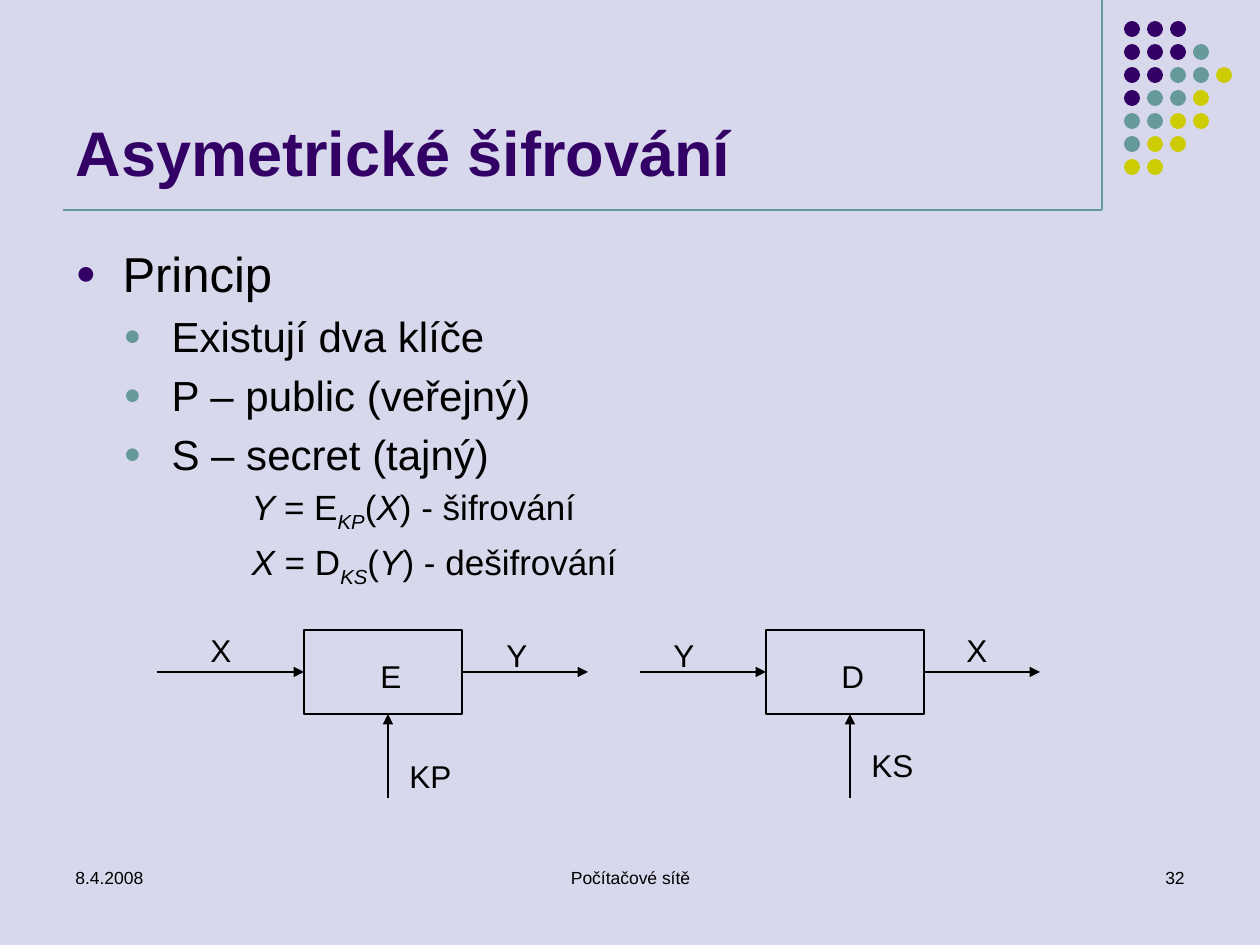
from lxml.etree import SubElement
from pptx import Presentation
from pptx.dml.color import RGBColor
from pptx.enum.shapes import MSO_CONNECTOR, MSO_SHAPE
from pptx.enum.text import MSO_ANCHOR, MSO_AUTO_SIZE, PP_ALIGN
from pptx.oxml.ns import qn
from pptx.util import Emu, Pt

EMU_PER_PX = 914400 / 126
FONT = "Arial"
COLORS = {"background": "D8D8EC", "purple": "330066", "teal": "669999",
          "yellow": "CCCC00", "black": "000000"}

TITLE = "Asymetrické šifrování"
BULLETS = [(0, "Princip"), (1, "Existují dva klíče"),
           (1, "P – public (veřejný)"), (1, "S – secret (tajný)")]
# Result, function, key, argument, meaning
FORMULAS = [("Y", "E", "KP", "X", "šifrování"),
            ("X", "D", "KS", "Y", "dešifrování")]
# Level: text size, left margin, hanging indent, bullet colour
LEVELS = {0: (28, 47, 47, "purple"), 1: (24, 96, 48, "teal"), 4: (20, 220, 44, None)}

DOT_ROWS = ["PPP", "PPPT", "PPTTY", "PTTY", "TTYY", "TYY", "YY"]
DOT_COLORS = {"P": "purple", "T": "teal", "Y": "yellow"}
DOT_LEFT, DOT_TOP, DOT_SIZE, DOT_PITCH = 1124, 21, 16, 23

FOOTERS = [("8.4.2008", 63, 294, PP_ALIGN.LEFT),
           ("Počítačové sítě", 431, 399, PP_ALIGN.CENTER),
           ("32", 903, 294, PP_ALIGN.RIGHT)]

BOX_TOP, BOX_WIDTH, BOX_HEIGHT = 630, 158, 84
FLOW_Y, KEY_BOTTOM, KEY_OFFSET = 672, 798, 84
# Each cipher: box left, start of input arrow, end of output arrow,
# labels as (text, left, top)
CIPHERS = [
    (304, 157, 588, [("E", 368, 651), ("KP", 397, 751), ("X", 198, 625), ("Y", 494, 630)]),
    (766, 640, 1040, [("D", 829, 651), ("KS", 859, 740), ("Y", 661, 630), ("X", 954, 625)]),
]


def px(*lengths):
    return [Emu(round(length * EMU_PER_PX)) for length in lengths]


def rgb(name):
    return RGBColor.from_string(COLORS[name])


def set_font(font, size, color="black", bold=None):
    font.name, font.size, font.bold = FONT, Pt(size), bold
    font.color.rgb = rgb(color)


def add_line(slide, start, end, color="black", arrow=False):
    line = slide.shapes.add_connector(MSO_CONNECTOR.STRAIGHT, *px(*start, *end))
    line.line.color.rgb = rgb(color)
    line.line.width = Pt(0.75)
    if arrow:
        SubElement(line.line._get_or_add_ln(), qn("a:tailEnd"), type="triangle")
    SubElement(line._element.spPr, qn("a:effectLst"))


def add_shape(slide, kind, *box):
    shape = slide.shapes.add_shape(kind, *px(*box))
    shape.shadow.inherit = False
    return shape


def add_text(slide, text, box, size, align=PP_ALIGN.LEFT, wrap=True):
    frame = slide.shapes.add_textbox(*px(*box)).text_frame
    frame.word_wrap = wrap
    paragraph = frame.paragraphs[0]
    paragraph.text, paragraph.alignment = text, align
    set_font(paragraph.font, size)


def place(placeholder, *box):
    (placeholder.left, placeholder.top,
     placeholder.width, placeholder.height) = px(*box)
    placeholder.text_frame.auto_size = MSO_AUTO_SIZE.NONE
    return placeholder.text_frame


def format_level(paragraph, level):
    size, margin, hanging, bullet_color = LEVELS[level]
    paragraph.level = level
    paragraph.alignment = PP_ALIGN.LEFT
    set_font(paragraph.font, size)
    properties = paragraph._p.get_or_add_pPr()
    left, indent = px(margin, -hanging)
    properties.set("marL", str(left))
    properties.set("indent", str(indent))
    bullet = []
    if bullet_color:
        color = SubElement(properties, qn("a:buClr"))
        SubElement(color, qn("a:srgbClr"), val=COLORS[bullet_color])
        bullet = [color, SubElement(properties, qn("a:buSzPct"), val="70000"),
                  SubElement(properties, qn("a:buChar"), char="●")]
    else:
        bullet = [SubElement(properties, qn("a:buNone"))]
    # Bullet settings must come before the default run properties
    for element in bullet:
        properties.find(qn("a:defRPr")).addprevious(element)


def add_formula(paragraph, result, function, key, argument, meaning):
    parts = [(f"{result} ", True), (f"= {function}", False), (key, True),
             ("(", False), (argument, True), (f") - {meaning}", False)]
    for text, italic in parts:
        run = paragraph.add_run()
        run.text, run.font.italic = text, italic
        if text == key:
            run.font._element.set("baseline", "-25000")


def add_frame(slide):
    add_line(slide, (1102, 0), (1102, 210), "teal")
    add_line(slide, (63, 210), (1102, 210), "teal")
    for row, codes in enumerate(DOT_ROWS):
        for column, code in enumerate(codes):
            dot = add_shape(slide, MSO_SHAPE.OVAL, DOT_LEFT + column * DOT_PITCH,
                            DOT_TOP + row * DOT_PITCH, DOT_SIZE, DOT_SIZE)
            dot.fill.solid()
            dot.fill.fore_color.rgb = rgb(DOT_COLORS[code])
            dot.line.fill.background()
    for text, left, width, align in FOOTERS:
        add_text(slide, text, (left, 861, width, 63), 10, align)


def add_content(slide):
    frame = place(slide.shapes.title, 63, 16, 1040, 179)
    frame.vertical_anchor = MSO_ANCHOR.BOTTOM
    frame.text = TITLE
    frame.paragraphs[0].alignment = PP_ALIGN.LEFT
    set_font(frame.paragraphs[0].font, 36, "purple", True)

    frame = place(slide.placeholders[1], 63, 237, 1134, 607)
    frame.text = "\n".join(text for _, text in BULLETS)
    for paragraph, (level, _) in zip(frame.paragraphs, BULLETS):
        format_level(paragraph, level)
    for formula in FORMULAS:
        paragraph = frame.add_paragraph()
        format_level(paragraph, 4)
        add_formula(paragraph, *formula)


def add_cipher(slide, left, start, end, labels):
    box = add_shape(slide, MSO_SHAPE.RECTANGLE, left, BOX_TOP, BOX_WIDTH, BOX_HEIGHT)
    box.fill.background()
    box.line.color.rgb = rgb("black")
    box.line.width = Pt(0.75)
    key_x = left + KEY_OFFSET
    for tail, head in [((start, FLOW_Y), (left, FLOW_Y)),
                       ((left + BOX_WIDTH, FLOW_Y), (end, FLOW_Y)),
                       ((key_x, KEY_BOTTOM), (key_x, BOX_TOP + BOX_HEIGHT))]:
        add_line(slide, tail, head, arrow=True)
    for text, label_left, label_top in labels:
        width = 26 + 21 * len(text)
        add_text(slide, text, (label_left, label_top, width, 50), 18, wrap=False)


def main():
    presentation = Presentation()
    presentation.slide_width, presentation.slide_height = px(1260, 945)
    slide = presentation.slides.add_slide(presentation.slide_layouts[1])
    slide.background.fill.solid()
    slide.background.fill.fore_color.rgb = rgb("background")
    add_frame(slide)
    add_content(slide)
    for cipher in CIPHERS:
        add_cipher(slide, *cipher)
    presentation.save("out.pptx")


if __name__ == "__main__":
    main()
